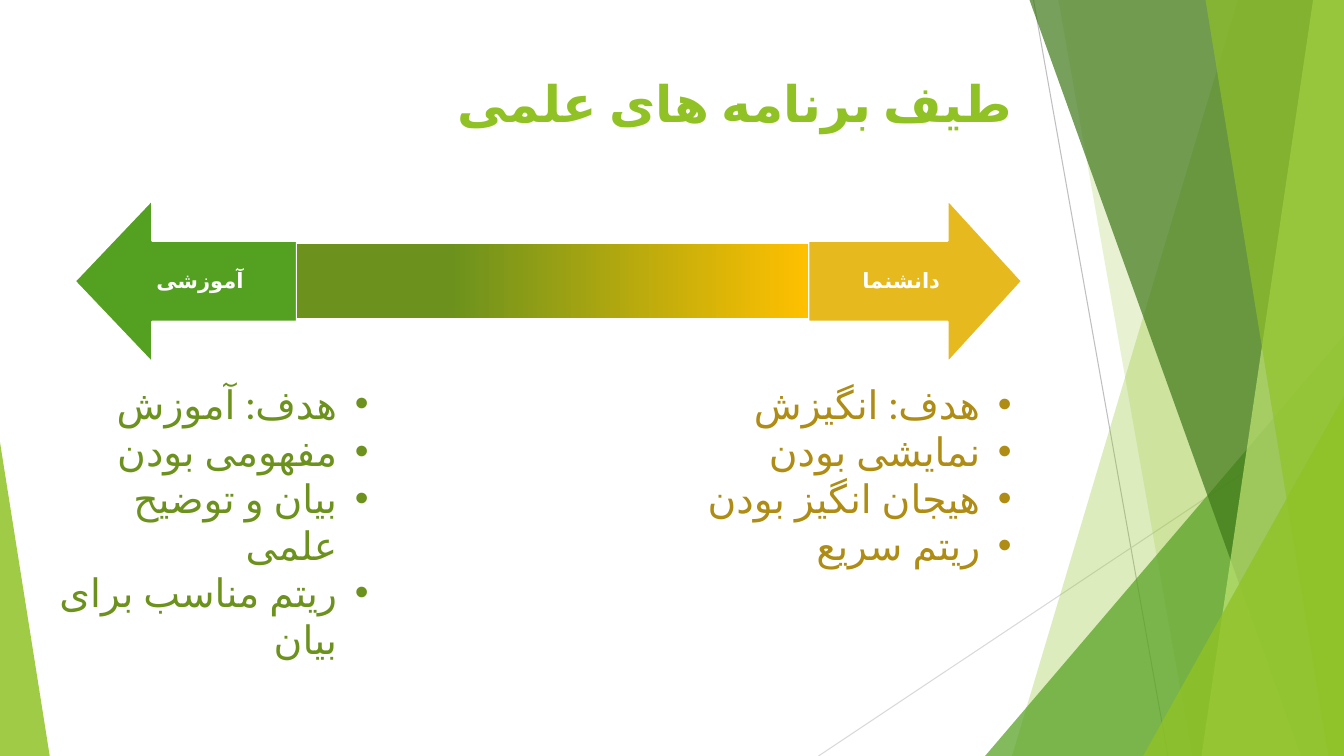
from lxml import etree
from pptx import Presentation, util as u
from pptx.dml.color import RGBColor
from pptx.enum import shapes, text
from pptx.oxml.ns import qn

presentation = Presentation()
presentation.slide_width, presentation.slide_height = u.Inches(40 / 3), u.Inches(7.5)
slide = presentation.slides.add_slide(presentation.slide_layouts[6])

# All lengths are in hundredths of the slide: columns across, rows down
column = presentation.slide_width / 100
row = presentation.slide_height / 100
LIME, GREEN, GOLD = "90C226", "54A021", "E6B91E"
OLIVE, AMBER, OCHRE, WHITE = "6C921D", "FFC000", "AF8C14", "FFFFFF"


def paint(target, color, opacity=100):
    """Solid colour for a fill or a line, with optional transparency."""
    target.solid()
    target.fore_color.rgb = RGBColor.from_string(color)
    if opacity < 100:
        element = target._xPr.find(".//" + qn("a:srgbClr"))
        etree.SubElement(element, qn("a:alpha"), val=str(opacity * 1000))


def write(shape, lines, size, color, font="Lato", bold=False, align=text.PP_ALIGN.RIGHT,
          anchor=text.MSO_ANCHOR.TOP, spacing=1.0, bullet=None):
    frame = shape.text_frame
    frame.word_wrap = True
    frame.vertical_anchor = anchor
    frame.text = "\n".join(lines)
    for paragraph in frame.paragraphs:
        paragraph.alignment = align
        paragraph.line_spacing = spacing
        properties = paragraph._p.get_or_add_pPr()
        properties.set("rtl", "1")
        if bullet:
            indent = u.Inches(0.31)
            properties.set("marL", str(indent))
            properties.set("indent", str(-indent))
            etree.SubElement(properties, qn("a:buFont"), typeface="Arial")
            etree.SubElement(properties, qn("a:buChar"), char=bullet)
        run = paragraph.runs[0]
        run.font.size, run.font.bold, run.font.name = u.Pt(size), bold, font
        run.font.color.rgb = RGBColor.from_string(color)
        run_properties = run._r.get_or_add_rPr()
        run_properties.set("lang", "fa-IR")
        etree.SubElement(run_properties, qn("a:cs"), typeface=font)


# Thin lines behind the facets
for x1, y1, x2, y2, color in [(76.9, 0, 86.9, 100, "BFBFBF"), (100, 53.7, 60.9, 100, "D9D9D9")]:
    line = slide.shapes.add_connector(shapes.MSO_CONNECTOR.STRAIGHT, int(x1 * column),
                                      int(y1 * row), int(x2 * column), int(y2 * row))
    line.line.width = u.Pt(0.75)
    paint(line.line.fill, color)
    etree.SubElement(line._element.spPr, qn("a:effectLst"))

# Facets: bands from a top x and a bottom x to the right edge, and
# triangles from left, top and width down to the bottom edge with a peak
facets = [
    ("band", (92.1, 75.3), LIME, 30),
    ("band", (78.75, 88.7), LIME, 20),
    ("triangle", (73.3, 44.4, 26.7, 1), GREEN, 72),
    ("band", (76.6, 96.8), "3F7819", 70),
    ("band", (97.7, 89.4), "C0E474", 70),
    ("band", (89.7, 98.85), LIME, 65),
    ("triangle", (85.05, 52.4, 14.95, 1), LIME, 80),
    ("triangle", (0, 58.5, 3.7, 0), LIME, 85),
]
for kind, place, color, opacity in facets:
    if kind == "band":
        top_x, bottom_x = place
        builder = slide.shapes.build_freeform(top_x * column, 0)
        builder.add_line_segments([(100 * column, 0), (100 * column, 100 * row),
                                   (bottom_x * column, 100 * row)], close=True)
        facet = builder.convert_to_shape()
    else:
        left, top, width, peak = place
        facet = slide.shapes.add_shape(
            shapes.MSO_SHAPE.ISOSCELES_TRIANGLE, int(left * column), int(top * row),
            int(width * column), int((100 - top) * row))
        facet.adjustments[0] = peak
    facet.shadow.inherit = False
    paint(facet.fill, color, opacity)
    facet.line.fill.background()

# Title
title = slide.shapes.add_textbox(int(5.55 * column), int(8.93 * row),
                                 int(70.5 * column), int(19.2 * row))
write(title, ["طیف برنامه های علمی"], 36, LIME, bold=True)

# Arrows at both ends of the spectrum
middle, half_head, half_shaft = 37.2, 10.8, 5.35
left_base, right_base = 22.1, 60.15
arrows = [
    ("آموزشی", 5.55, 11.33, left_base, GREEN, (0.4, 0.12)),
    ("دانشنما", 76.05, 70.5, right_base, GOLD, (0.12, 0.4)),
]
for label, tip, neck, base, color, (inset_left, inset_right) in arrows:
    outline = [(neck, -half_head), (neck, -half_shaft), (base, -half_shaft),
               (base, half_shaft), (neck, half_shaft), (neck, half_head)]
    builder = slide.shapes.build_freeform(tip * column, middle * row)
    builder.add_line_segments([(x * column, (middle + y) * row) for x, y in outline], close=True)
    arrow = builder.convert_to_shape()
    arrow.shadow.inherit = False
    paint(arrow.fill, color)
    paint(arrow.line.fill, WHITE)
    arrow.line.width = u.Pt(1.5)
    frame = arrow.text_frame
    frame.margin_left, frame.margin_right = u.Inches(inset_left), u.Inches(inset_right)
    frame.margin_top = frame.margin_bottom = u.Inches(0.52)
    write(arrow, [label], 15, WHITE, font="Karla", bold=True, align=text.PP_ALIGN.CENTER,
          anchor=text.MSO_ANCHOR.MIDDLE, spacing=0.9)

# Gradient bar between the arrows
bar = slide.shapes.add_shape(shapes.MSO_SHAPE.RECTANGLE, int(left_base * column), int(32.25 * row),
                             int((right_base - left_base) * column), int(9.85 * row))
bar.shadow.inherit = False
bar.line.fill.background()
bar.fill.gradient()
bar.fill.gradient_angle = 0
for stop, position, color in zip(bar.fill.gradient_stops, (0.3, 1), (OLIVE, AMBER)):
    stop.position = position
    stop.color.rgb = RGBColor.from_string(color)

# Traits of each end
traits = [
    (51.3, 39.1, OCHRE, ["هدف: انگیزش", "نمایشی بودن", "هیجان انگیز بودن", "ریتم سریع"]),
    (3.45, 45.3, OLIVE, ["هدف: آموزش", "مفهومی بودن", "بیان و توضیح علمی",
                         "ریتم مناسب برای بیان"]),
]
for left, height, color, lines in traits:
    box = slide.shapes.add_textbox(int(left * column), int(49.6 * row),
                                   int(24.7 * column), int(height * row))
    write(box, lines, 28, color, bullet="•")

presentation.save("out.pptx")
